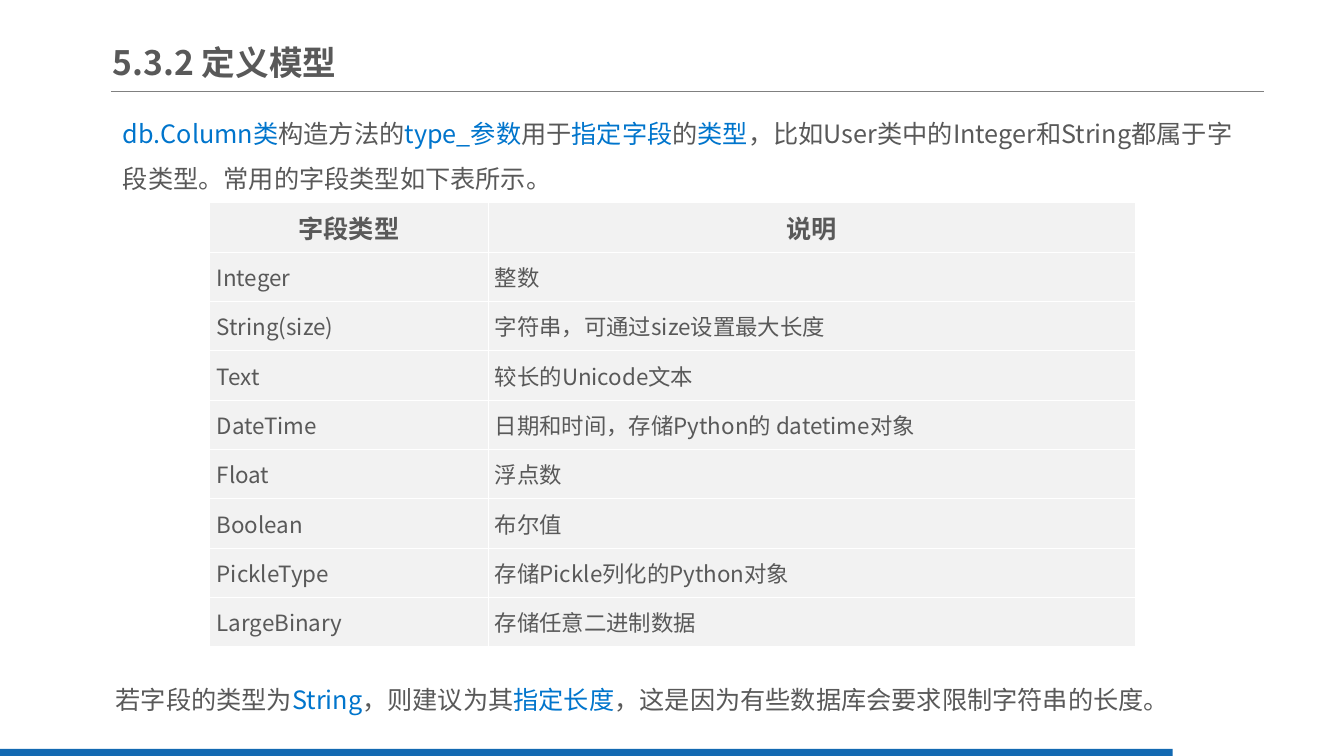
from dataclasses import dataclass

from lxml import etree
from pptx import Presentation
from pptx.dml.color import RGBColor
from pptx.enum.shapes import MSO_CONNECTOR, MSO_SHAPE
from pptx.enum.text import MSO_ANCHOR, MSO_AUTO_SIZE, PP_ALIGN
from pptx.oxml.ns import qn
from pptx.util import Emu, Pt

LEFT, CENTER = PP_ALIGN.LEFT, PP_ALIGN.CENTER
MIDDLE = MSO_ANCHOR.MIDDLE
FIXED, GROW = MSO_AUTO_SIZE.NONE, MSO_AUTO_SIZE.SHAPE_TO_FIT_TEXT
LINE, RECT = MSO_CONNECTOR.STRAIGHT, MSO_SHAPE.RECTANGLE

SCALE = 9144  # EMU in one px, 100 px to the inch
FACE = "Noto Sans CJK SC"
COLORS = {
    "text": "595959",
    "key": "0075CC",
    "rule": "808080",
    "bar": "1369B2",
    "cell": "F2F2F2",
    "edge": "FFFFFF",
}
TITLE_FONT = {"size": Pt(24), "bold": True}
NOTE_FONT = {"size": Pt(18), "bold": False}
HEAD_FONT = {"size": Pt(18), "bold": True}
CELL_FONT = {"size": Pt(16), "bold": False}


@dataclass
class Box:
    left: int
    top: int
    width: int
    height: int

    def emu(self) -> list[Emu]:
        return [px(n) for n in (self.left, self.top, self.width, self.height)]


@dataclass
class Note:
    """A paragraph whose words between asterisks take the key colour."""
    box: Box
    text: str


NOTES = [
    Note(Box(112, 97, 1123, 101),
         "*db.Column类*构造方法的*type_参数*用于*指定字段*的*类型*"
         "，比如User类中的Integer和String都属于字段类型。常用的字段类型如下表所示。"),
    Note(Box(105, 659, 1123, 56),
         "若字段的类型为*String*，则建议为其*指定长度*"
         "，这是因为有些数据库会要求限制字符串的长度。"),
]
TITLE = Box(112, 34, 554, 55)
BAR = Box(0, 743, 1163, 7)
GRID = Box(208, 201, 918, 441)
COLS = (276, 642)
ROWS = [
    ("字段类型", "说明"),
    ("Integer", "整数"),
    ("String(size)", "字符串，可通过size设置最大长度"),
    ("Text", "较长的Unicode文本"),
    ("DateTime", "日期和时间，存储Python的 datetime对象"),
    ("Float", "浮点数"),
    ("Boolean", "布尔值"),
    ("PickleType", "存储Pickle列化的Python对象"),
    ("LargeBinary", "存储任意二进制数据"),
]


def px(n: int) -> Emu:
    return Emu(n * SCALE)


def rgb(name: str) -> RGBColor:
    return RGBColor.from_string(COLORS[name])


def assign(item, values: dict) -> None:
    for name, value in values.items():
        setattr(item, name, value)


def add_run(para, text: str, font: dict, color: str = "text") -> None:
    run = para.add_run()
    run.text = text
    assign(run.font, {"name": FACE, **font})
    run.font.color.rgb = rgb(color)
    latin = run.font._element.find(qn("a:latin"))
    east = etree.Element(qn("a:ea"), typeface=FACE)
    latin.addnext(east)


def add_title(slide) -> None:
    shape = slide.shapes.title
    assign(shape, dict(zip(("left", "top", "width", "height"), TITLE.emu())))
    frame = shape.text_frame
    assign(frame, {"margin_left": 0, "margin_right": 0,
                   "margin_top": px(7), "margin_bottom": px(7),
                   "vertical_anchor": MIDDLE, "word_wrap": True,
                   "auto_size": FIXED})
    para = frame.paragraphs[0]
    para.alignment = LEFT
    add_run(para, "5.3.2 定义模型", TITLE_FONT)


def add_frame(slide) -> None:
    """Draw the rule under the title and the bar at the foot."""
    rule = slide.shapes.add_connector(LINE, px(110), px(91), px(1254), px(91))
    rule.line.color.rgb = rgb("rule")
    rule.line.width = Pt(0.75)
    etree.SubElement(rule._element.spPr, qn("a:effectLst"))
    bar = slide.shapes.add_shape(RECT, *BAR.emu())
    bar.shadow.inherit = False
    bar.fill.solid()
    bar.fill.fore_color.rgb = rgb("bar")
    bar.line.fill.background()


def add_note(slide, note: Note) -> None:
    frame = slide.shapes.add_textbox(*note.box.emu()).text_frame
    assign(frame, {"word_wrap": True, "auto_size": GROW})
    para = frame.paragraphs[0]
    para.line_spacing = 1.5
    for i, part in enumerate(note.text.split("*")):
        if part:
            add_run(para, part, NOTE_FONT, "key" if i % 2 else "text")


def add_edges(cell) -> None:
    props = cell._tc.get_or_add_tcPr()
    for side in ("lnL", "lnR", "lnT", "lnB"):
        edge = etree.SubElement(props, qn(f"a:{side}"), w=str(Pt(0.75)))
        fill = etree.SubElement(edge, qn("a:solidFill"))
        etree.SubElement(fill, qn("a:srgbClr"), val=COLORS["edge"])


def fill_cell(cell, text: str, head: bool) -> None:
    assign(cell, {"margin_left": px(7), "margin_right": px(7),
                  "margin_top": 0, "margin_bottom": 0,
                  "vertical_anchor": MIDDLE})
    add_edges(cell)
    cell.fill.solid()
    cell.fill.fore_color.rgb = rgb("cell")
    para = cell.text_frame.paragraphs[0]
    para.alignment = CENTER if head else LEFT
    add_run(para, text, HEAD_FONT if head else CELL_FONT)


def add_grid(slide) -> None:
    table = slide.shapes.add_table(len(ROWS), len(COLS), *GRID.emu()).table
    assign(table, {"first_row": False, "horz_banding": False})
    for col, width in zip(table.columns, COLS):
        col.width = px(width)
    for r, row in enumerate(ROWS):
        for c, text in enumerate(row):
            fill_cell(table.cell(r, c), text, r == 0)


def main() -> None:
    deck = Presentation()
    assign(deck, {"slide_width": px(1333), "slide_height": px(750)})
    slide = deck.slides.add_slide(deck.slide_layouts[5])
    add_frame(slide)
    add_title(slide)
    for note in NOTES:
        add_note(slide, note)
    add_grid(slide)
    deck.save("out.pptx")


if __name__ == "__main__":
    main()
